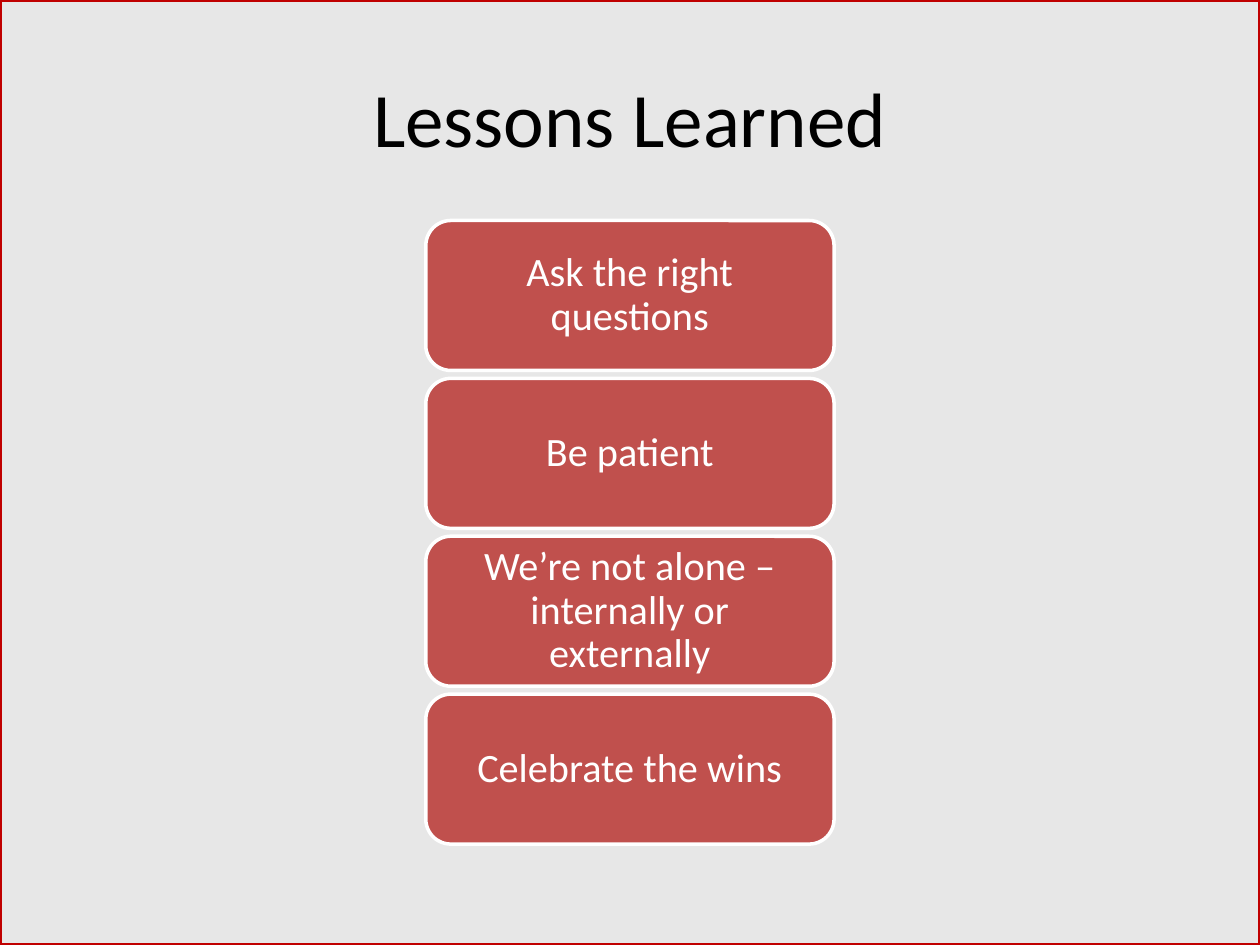
from pptx import Presentation
from pptx.dml.color import RGBColor
from pptx.enum.shapes import MSO_SHAPE as Shape
from pptx.enum.text import MSO_ANCHOR as Anchor, PP_ALIGN as Align
from pptx.util import Inches, Pt

TITLE = "Lessons Learned"
LESSONS = [
    "Ask the right questions",
    "Be patient",
    "We’re not alone – internally or externally",
    "Celebrate the wins",
]
WIDE, HIGH = 10, 7.5
CARD_W, CARD_H = 3.24, 1.19
TOP, STEP = 1.75, 1.253


def color(code):
    return RGBColor.from_string(code)


def add_box(slide, kind, place, fill, line):
    box = slide.shapes.add_shape(kind, *map(Inches, place))
    box.shadow.inherit = False
    box.fill.solid()
    box.fill.fore_color.rgb = color(fill)
    box.line.color.rgb = color(line)
    box.line.width = Pt(2)
    return box


def write(shape, text, size, ink):
    """Put one centred paragraph in the shape and return it."""
    frame = shape.text_frame
    frame.word_wrap = True
    frame.vertical_anchor = Anchor.MIDDLE
    para = frame.paragraphs[0]
    para.alignment = Align.CENTER
    run = para.add_run()
    run.text = text
    run.font.name = "Calibri"
    run.font.size = Pt(size)
    run.font.color.rgb = color(ink)
    return para


def main():
    deck = Presentation()
    deck.slide_width, deck.slide_height = Inches(WIDE), Inches(HIGH)
    slide = deck.slides.add_slide(deck.slide_layouts[6])

    add_box(slide, Shape.RECTANGLE, (0, 0, WIDE, HIGH), "E7E7E7", "C00000")
    title = slide.shapes.add_textbox(*map(Inches, (0.5, 0.3, 9, 1.25)))
    write(title, TITLE, 44, "000000")

    left = (WIDE - CARD_W) / 2
    for row, lesson in enumerate(LESSONS):
        place = (left, TOP + row * STEP, CARD_W, CARD_H)
        card = add_box(slide, Shape.ROUNDED_RECTANGLE, place, "C0504D", "FFFFFF")
        write(card, lesson, 23, "FFFFFF").line_spacing = 0.9

    deck.save("out.pptx")


if __name__ == "__main__":
    main()
